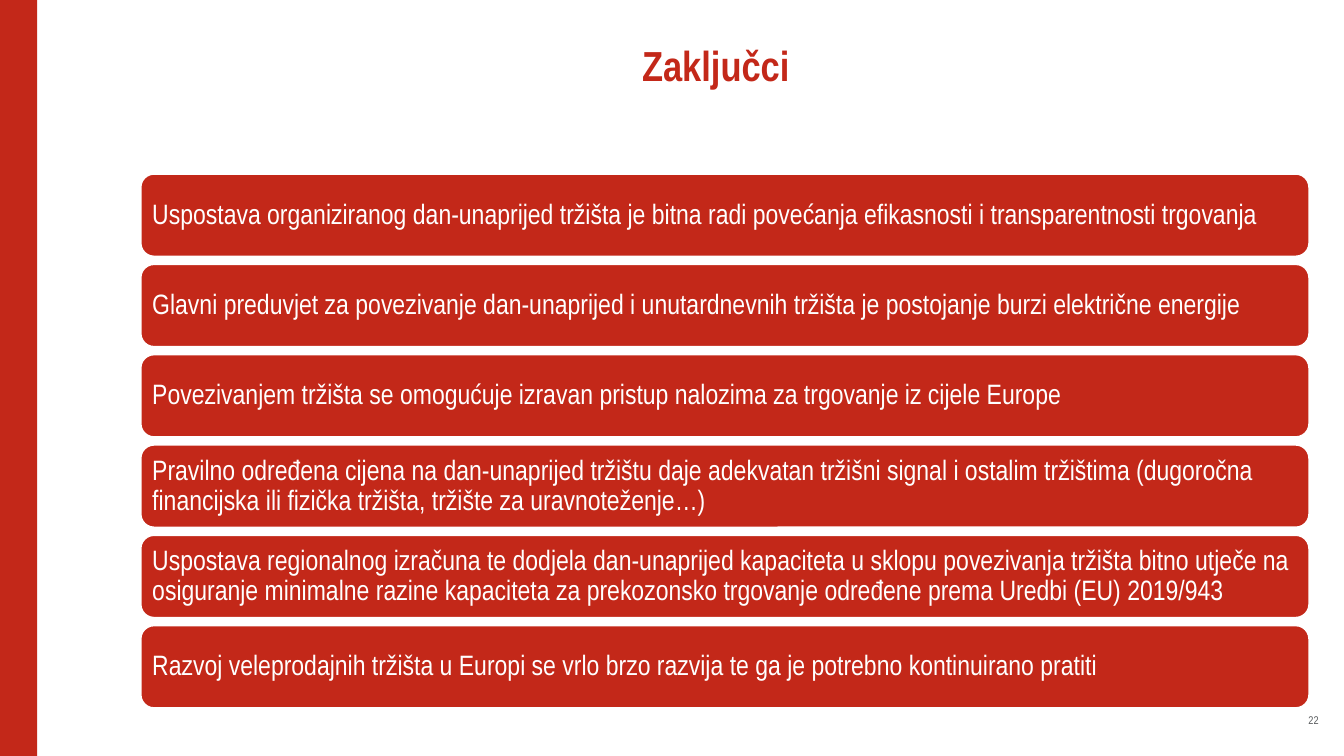
from dataclasses import dataclass

from pptx import Presentation
from pptx import util as u
from pptx.dml import color
from pptx.enum import shapes, text


@dataclass(frozen=True)
class Theme:
    red: color.RGBColor = color.RGBColor.from_string("C32819")
    white: color.RGBColor = color.RGBColor.from_string("FFFFFF")
    grey: color.RGBColor = color.RGBColor.from_string("5A5D5F")
    font: str = "Arial Narrow"
    title_size: int = 30
    body_size: int = 20
    number_size: int = 8


theme = Theme()


def place(shape, left, top, width, height):
    box = {"left": left, "top": top, "width": width, "height": height}
    for name, value in box.items():
        setattr(shape, name, u.Inches(value))


def write(shape, words, size, ink, align, inset=0, bold=False):
    frame = shape.text_frame
    frame.text = words
    margins = ("margin_left", "margin_top", "margin_right", "margin_bottom")
    frame_format = {name: u.Inches(inset) for name in margins}
    frame_format |= {"word_wrap": True, "auto_size": text.MSO_AUTO_SIZE.NONE,
                     "vertical_anchor": text.MSO_ANCHOR.MIDDLE}
    for name, value in frame_format.items():
        setattr(frame, name, value)
    paragraph = frame.paragraphs[0]
    paragraph.alignment = align
    font = paragraph.runs[0].font
    for name, value in {"name": theme.font, "size": u.Pt(size), "bold": bold}.items():
        setattr(font, name, value)
    font.color.rgb = ink
    return paragraph


presentation = Presentation()
presentation.slide_width = u.Inches(13.33)
presentation.slide_height = u.Inches(7.5)
slide = presentation.slides.add_slide(presentation.slide_layouts[5])

# Red band on the left edge
band = slide.shapes.add_shape(shapes.MSO_SHAPE.RECTANGLE, 0, 0,
                              u.Inches(0.37), presentation.slide_height)
band.shadow.inherit = False
band.fill.solid()
band.fill.fore_color.rgb = theme.red
band.line.fill.background()

# Title
title = slide.shapes.title
place(title, 1.1, 0.13, 12, 1.02)
write(title, "Zaključci", theme.title_size, theme.red, text.PP_ALIGN.CENTER, bold=True)

# Conclusion bars
conclusions = [
    "Uspostava organiziranog dan-unaprijed tržišta je bitna radi povećanja "
    "efikasnosti i transparentnosti trgovanja",
    "Glavni preduvjet za povezivanje dan-unaprijed i unutardnevnih tržišta je "
    "postojanje burzi električne energije",
    "Povezivanjem tržišta se omogućuje izravan pristup nalozima za trgovanje iz "
    "cijele Europe",
    "Pravilno određena cijena na dan-unaprijed tržištu daje adekvatan tržišni signal "
    "i ostalim tržištima (dugoročna financijska ili fizička tržišta, tržište za "
    "uravnoteženje…)",
    "Uspostava regionalnog izračuna te dodjela dan-unaprijed kapaciteta u sklopu "
    "povezivanja tržišta bitno utječe na osiguranje minimalne razine kapaciteta za "
    "prekozonsko trgovanje određene prema Uredbi (EU) 2019/943",
    "Razvoj veleprodajnih tržišta u Europi se vrlo brzo razvija te ga je potrebno "
    "kontinuirano pratiti",
]
first_top, last_top = 1.72, 6.2
pitch = (last_top - first_top) / (len(conclusions) - 1)
for row, conclusion in enumerate(conclusions):
    bar = slide.shapes.add_shape(shapes.MSO_SHAPE.ROUNDED_RECTANGLE, 0, 0, 0, 0)
    place(bar, 1.39, first_top + row * pitch, 11.6, 0.83)
    bar.shadow.inherit = False
    bar.fill.solid()
    bar.fill.fore_color.rgb = theme.red
    bar.line.color.rgb = theme.white
    bar.line.width = u.Pt(2)
    paragraph = write(bar, conclusion, theme.body_size, theme.white,
                      text.PP_ALIGN.LEFT, inset=0.08)
    paragraph.line_spacing = 0.9

# Page number
number = slide.shapes.add_textbox(0, 0, 0, 0)
place(number, 12.42, 7.08, 0.66, 0.13)
write(number, "22", theme.number_size, theme.grey, text.PP_ALIGN.RIGHT)

presentation.save("out.pptx")
